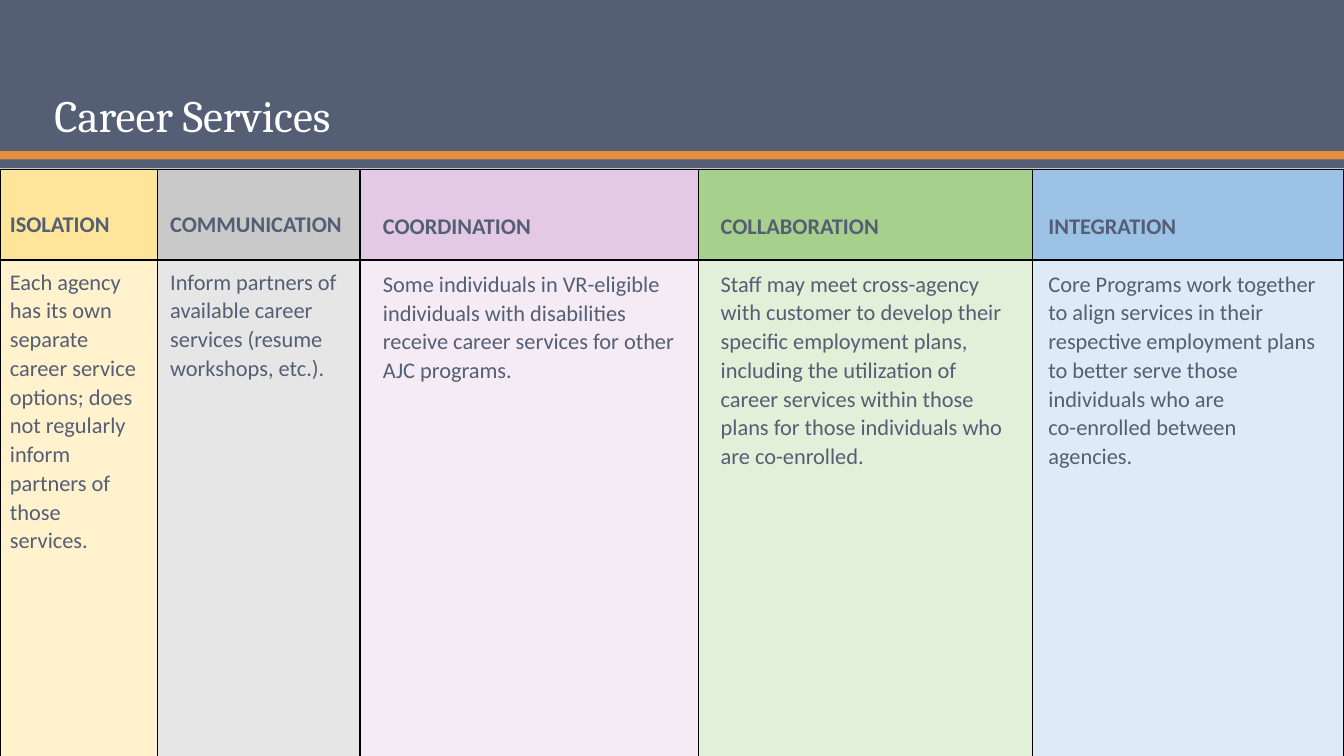
from itertools import accumulate

from lxml import etree
from pptx import Presentation
from pptx import util as u
from pptx.dml.color import RGBColor
from pptx.enum import shapes, text
from pptx.oxml.ns import qn

W, H = 13.33, 7.5
COLORS = {"slate": "545E74", "orange": "E38E41", "white": "FFFFFF", "border": "000000"}
ROWS = [0.9, 4.94]

# width, text left margin, text width, text top, text height, head fill, body fill, heading, body
STAGES = [
    (1.56, 0, 1.47, 0.34, 4.31, "FFE599", "FFF2CC", "ISOLATION",
     "Each agency has its own separate career service options; does not regularly "
     "inform partners of those services."),
    (2.01, 0.03, 1.96, 0.34, 4.31, "C9C9C9", "E7E6E6", "COMMUNICATION",
     "Inform partners of available career services (resume workshops, etc.)."),
    (3.36, 0.13, 3.1, 0.36, 4.31, "E3C9E3", "F5EBF5", "COORDINATION",
     "Some individuals in VR-eligible individuals with disabilities receive career "
     "services for other AJC programs."),
    (3.31, 0.12, 3.11, 0.36, 5.1, "A8D08D", "E2EFD9", "COLLABORATION",
     "Staff may meet cross-agency with customer to develop their specific employment "
     "plans, including the utilization of career services within those plans for those "
     "individuals who are co-enrolled."),
    (3.09, 0.06, 2.91, 0.36, 5.1, "9CC2E5", "DEEAF6", "INTEGRATION",
     "Core Programs work together to align services in their respective employment "
     "plans to better serve those individuals who are\nco-enrolled between agencies."),
]


def rgb(value):
    return RGBColor.from_string(COLORS.get(value, value))


def inches(*lengths):
    return [u.Inches(v) for v in lengths]


def add_band(s, top, height, color):
    sp = s.shapes.add_shape(shapes.MSO_SHAPE.RECTANGLE, *inches(0, top, W, height))
    sp.shadow.inherit = False
    sp.fill.solid()
    sp.fill.fore_color.rgb = rgb(color)
    sp.line.fill.background()


def add_textbox(s, box, anchor=text.MSO_ANCHOR.TOP):
    tf = s.shapes.add_textbox(*inches(*box)).text_frame
    tf.word_wrap = True
    tf.vertical_anchor = anchor
    return tf


def write(p, content, font, size, color, spacing, bold=False):
    """Fill a paragraph with runs, turning each newline into a line break."""
    p.line_spacing = spacing
    for i, line in enumerate(content.split("\n")):
        if i:
            p.add_line_break()
        r = p.add_run()
        r.text = line
        r.font.name, r.font.size, r.font.bold = font, u.Pt(size), bold
        r.font.color.rgb = rgb(color)


def add_header(s, title):
    for top, height, color in [(0, 1.5, "slate"), (1.5, 0.09, "orange"), (1.58, 0.09, "slate")]:
        add_band(s, top, height, color)
    tf = add_textbox(s, (0.44, 0.33, 11.48, 1.13), text.MSO_ANCHOR.BOTTOM)
    write(tf.paragraphs[0], title, "Cambria", 32, "white", 0.9)


def style_cell(cell, fill):
    tcPr = cell._tc.get_or_add_tcPr()
    for side in ("a:lnL", "a:lnR", "a:lnT", "a:lnB"):
        ln = etree.SubElement(tcPr, qn(side), w=str(u.Pt(1)))
        solid = etree.SubElement(ln, qn("a:solidFill"))
        etree.SubElement(solid, qn("a:srgbClr"), val=COLORS["border"])
    cell.fill.solid()
    cell.fill.fore_color.rgb = rgb(fill)


def add_stage_table(s, left, top):
    widths = [stage[0] for stage in STAGES]
    table = s.shapes.add_table(len(ROWS), len(STAGES),
                               *inches(left, top, sum(widths), sum(ROWS))).table
    for row, height in zip(table.rows, ROWS):
        row.height = u.Inches(height)
    for c, (width, *_, head_fill, body_fill, _, _) in enumerate(STAGES):
        table.columns[c].width = u.Inches(width)
        for r, fill in enumerate((head_fill, body_fill)):
            style_cell(table.cell(r, c), fill)


def add_stage_texts(s, left, top):
    edges = accumulate((stage[0] for stage in STAGES), initial=left)
    for x, (_, margin, width, drop, height, _, _, heading, body) in zip(edges, STAGES):
        tf = add_textbox(s, (x + margin, top + drop, width, height))
        p = tf.paragraphs[0]
        p.space_after = u.Pt(20.5)
        write(p, heading, "Calibri", 16, "slate", 1.07, bold=True)
        write(tf.add_paragraph(), body, "Calibri", 16, "slate", 1.07)


def main():
    prs = Presentation()
    prs.slide_width, prs.slide_height = inches(W, H)
    s = prs.slides.add_slide(prs.slide_layouts[6])
    add_header(s, "Career Services")
    add_stage_table(s, 0, 1.68)
    add_stage_texts(s, 0, 1.68)
    prs.save("out.pptx")


if __name__ == "__main__":
    main()
